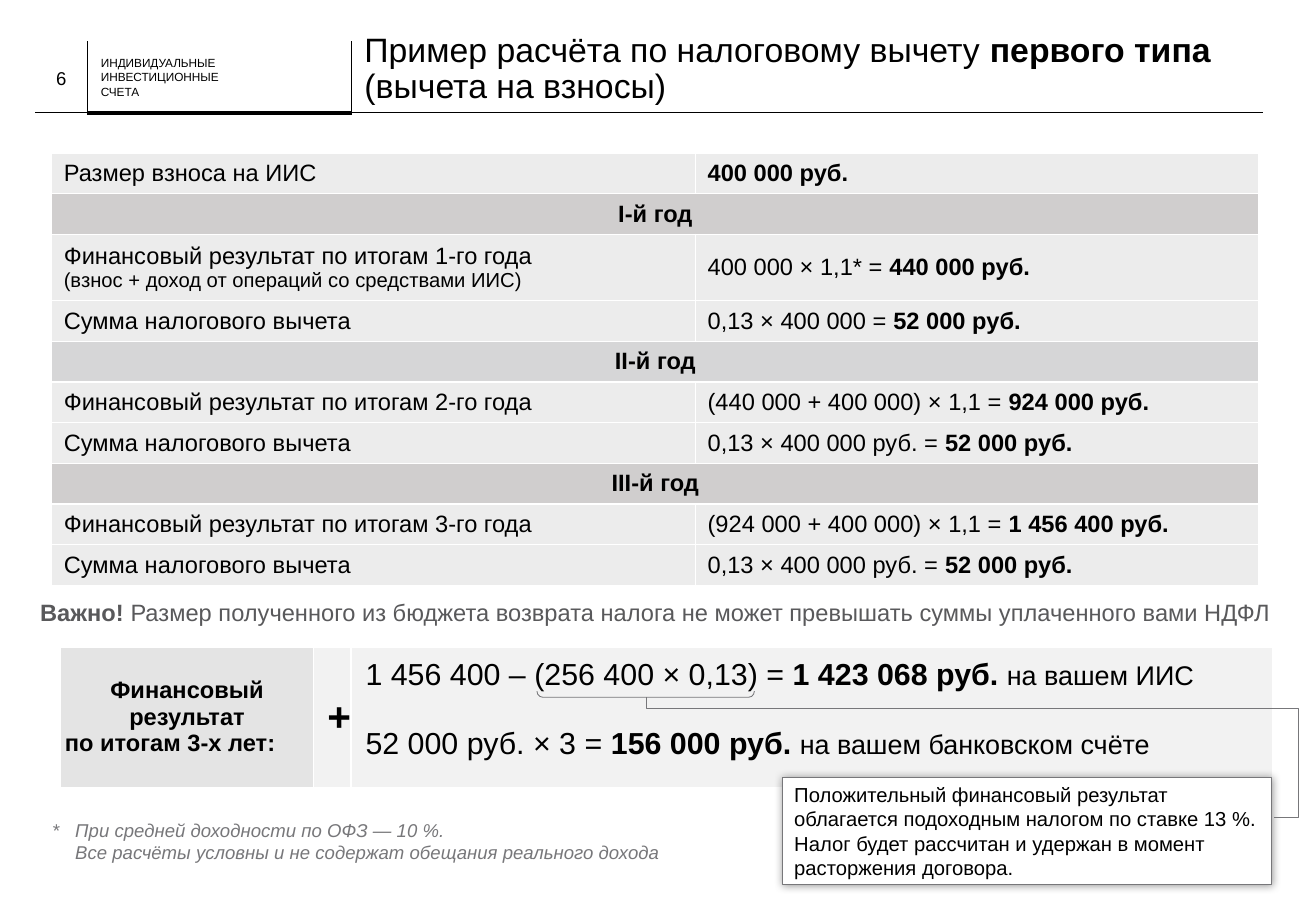
from dataclasses import dataclass

import lxml.etree
import pptx
import pptx.dml.color
import pptx.enum.shapes
import pptx.enum.text
import pptx.oxml.ns
import pptx.shapes.connector
import pptx.slide
import pptx.table
import pptx.text.text
import pptx.util

Pt = pptx.util.Pt
RGBColor = pptx.dml.color.RGBColor
Align = pptx.enum.text.PP_ALIGN
Anchor = pptx.enum.text.MSO_ANCHOR
Shape = pptx.enum.shapes.MSO_SHAPE
Connector = pptx.enum.shapes.MSO_CONNECTOR
qn = pptx.oxml.ns.qn
PLAIN_TABLE_STYLE = "{2D5ABB26-0587-4C30-8999-92F81FD0307C}"


@dataclass(frozen=True)
class Theme:
    font: str = "Arial"
    ink: str = "000000"
    notice: str = "59595B"
    muted: str = "77777A"
    white: str = "FFFFFF"
    row: str = "ECECEC"
    year: str = "D0CECE"
    year_light: str = "D6D6D7"
    result_label: str = "E4E4E4"
    result: str = "F2F2F2"
    title_size: float = 20
    body_size: float = 14
    sum_size: float = 18
    place_size: float = 16
    plus_size: float = 24
    small_size: float = 12
    note_size: float = 11
    label_size: float = 7


THEME = Theme()


@dataclass(frozen=True)
class Span:
    text: str
    bold: bool = False
    size: float | None = None


@dataclass(frozen=True)
class Para:
    spans: tuple[Span, ...]
    size: float = THEME.body_size
    color: str = THEME.ink
    align: Align = Align.LEFT
    italic: bool = False
    line_spacing: float | None = None
    indent: float = 0
    tab: float = 0


@dataclass(frozen=True)
class Row:
    cells: tuple[tuple[Para, ...], ...]
    fill: str = THEME.row
    height: float = 24.1


@dataclass(frozen=True)
class Line:
    start: tuple[float, float]
    end: tuple[float, float]
    width: float = 0.25


def plain(text: str, bold: bool = False, **style) -> Para:
    return Para((Span(text, bold),), **style)


def year(name: str, fill: str = THEME.year) -> Row:
    return Row(((plain(name, True, align=Align.CENTER),),), fill)


def sums(label: str, formula: str, total: str) -> Row:
    return Row(((plain(label),), (Para((Span(formula), Span(total, True))),)))


DEDUCTION = "Сумма налогового вычета"
YEARS = (
    sums("Размер взноса на ИИС", "", "400 000 руб."),
    year("I-й год"),
    Row(((plain("Финансовый результат по итогам 1-го года"),
          plain("(взнос + доход от операций со средствами ИИС)", size=THEME.small_size)),
         (Para((Span("400 000 × 1,1* = "), Span("440 000 руб.", True))),)), height=39.4),
    sums(DEDUCTION, "0,13 × 400 000 = ", "52 000 руб."),
    year("II-й год", THEME.year_light),
    sums("Финансовый результат по итогам 2-го года", "(440 000 + 400 000) × 1,1 = ", "924 000 руб."),
    sums(DEDUCTION, "0,13 × 400 000 руб. = ", "52 000 руб."),
    year("III-й год"),
    sums("Финансовый результат по итогам 3-го года", "(924 000 + 400 000) × 1,1 = ", "1 456 400 руб."),
    sums(DEDUCTION, "0,13 × 400 000 руб. = ", "52 000 руб."),
)
RESULTS = (
    ("1 456 400 – (256 400 × 0,13) = ", "1 423 068 руб. ", "на вашем ИИС"),
    ("52 000 руб. × 3 = ", "156 000 руб. ", "на вашем банковском счёте"),
)
HEADER_LINES = (
    Line((20.9, 66.4), (51.8, 66.4)),
    Line((51.8, 67), (208.8, 67), 2.25),
    Line((207.4, 66.4), (748.8, 66.4)),
    Line((51.8, 24.5), (51.8, 67)),
    Line((208.1, 24.5), (208.1, 67)),
)


def write(frame: pptx.text.text.TextFrame, paras: tuple[Para, ...]) -> None:
    for index, spec_para in enumerate(paras):
        para = frame.add_paragraph() if index else frame.paragraphs[0]
        para.alignment = spec_para.align
        if spec_para.line_spacing:
            para.line_spacing = spec_para.line_spacing
        font = para.font
        font.name, font.size, font.italic = THEME.font, Pt(spec_para.size), spec_para.italic
        font.color.rgb = RGBColor.from_string(spec_para.color)
        props = para._p.get_or_add_pPr()
        if spec_para.indent:
            props.set("marL", str(Pt(spec_para.indent)))
        if spec_para.tab:
            tabs = lxml.etree.Element(qn("a:tabLst"))
            lxml.etree.SubElement(tabs, qn("a:tab"), pos=str(Pt(spec_para.tab)), algn="l")
            props.find(qn("a:defRPr")).addprevious(tabs)
        if len({item.bold for item in spec_para.spans}) == 1:
            font.bold = spec_para.spans[0].bold
        for item in spec_para.spans:
            if not item.text:
                continue
            span = para.add_run()
            span.text = item.text
            if len(spec_para.spans) > 1:
                span.font.bold = item.bold
            if item.size:
                span.font.size = Pt(item.size)


def set_margins(frame, left: float, top: float, right: float, bottom: float) -> None:
    """Set the insets of a text frame or a table cell."""
    frame.margin_left, frame.margin_top = Pt(left), Pt(top)
    frame.margin_right, frame.margin_bottom = Pt(right), Pt(bottom)


def add_text(page: pptx.slide.Slide, at: tuple[float, ...], paras: tuple[Para, ...],
             anchor: Anchor = Anchor.MIDDLE, inset: tuple[float, ...] = (0, 0, 0, 0)) -> None:
    frame = page.shapes.add_textbox(*map(Pt, at)).text_frame
    frame.word_wrap, frame.vertical_anchor = True, anchor
    set_margins(frame, *inset)
    write(frame, paras)


def add_line(page: pptx.slide.Slide, line: Line, color: str = THEME.ink,
             kind: Connector = Connector.STRAIGHT) -> pptx.shapes.connector.Connector:
    link = page.shapes.add_connector(kind, *map(Pt, line.start + line.end))
    link.line.width = Pt(line.width)
    link.line.color.rgb = RGBColor.from_string(color)
    lxml.etree.SubElement(link._element.spPr, qn("a:effectLst"))
    return link


def add_table(page: pptx.slide.Slide, left: float, top: float, widths: tuple[float, ...],
              heights: tuple[float, ...]) -> pptx.table.Table:
    table = page.shapes.add_table(len(heights), len(widths), Pt(left), Pt(top),
                                  Pt(sum(widths)), Pt(sum(heights))).table
    table.first_row = table.horz_banding = False
    table._tbl.tblPr.find(qn("a:tableStyleId")).text = PLAIN_TABLE_STYLE
    for column, width in zip(table.columns, widths):
        column.width = Pt(width)
    for row, height in zip(table.rows, heights):
        row.height = Pt(height)
    return table


def format_cell(cell: pptx.table._Cell, fill: str, sides: str = "") -> None:
    """Fill the cell and give it white borders on the sides named by L, R, T, B."""
    cell.vertical_anchor = Anchor.MIDDLE
    cell.fill.solid()
    cell.fill.fore_color.rgb = RGBColor.from_string(fill)
    for index, side in enumerate(sides):
        border = lxml.etree.Element(qn(f"a:ln{side}"), w=str(Pt(1)))
        solid = lxml.etree.SubElement(border, qn("a:solidFill"))
        lxml.etree.SubElement(solid, qn("a:srgbClr"), val=THEME.white)
        cell._tc.get_or_add_tcPr().insert(index, border)


def add_years(page: pptx.slide.Slide) -> None:
    table = add_table(page, 30.6, 90.7, (381.6, 334.1), tuple(row.height for row in YEARS))
    for index, row in enumerate(YEARS):
        for column in range(2):
            format_cell(table.cell(index, column), row.fill, "LRTB")
        if len(row.cells) == 1:
            table.cell(index, 0).merge(table.cell(index, 1))
        for column, paras in enumerate(row.cells):
            write(table.cell(index, column).text_frame, paras)


def add_results(page: pptx.slide.Slide) -> None:
    table = add_table(page, 36, 383.8, (149.8, 22.3, 545.8), (32, 50.4))
    for index, (formula, total, place) in enumerate(RESULTS):
        for column, (fill, sides, left) in enumerate((
                (THEME.result_label, "R", 0), (THEME.result, "L", 0), (THEME.result, "", 8.6))):
            cell = table.cell(index, column)
            format_cell(cell, fill, sides)
            set_margins(cell, left, 0, 0, 0)
        write(table.cell(index, 2).text_frame, (Para(
            (Span(formula), Span(total, True), Span(place, size=THEME.place_size)),
            THEME.sum_size),))
    for column in range(2):
        table.cell(0, column).merge(table.cell(1, column))
    write(table.cell(0, 0).text_frame, (
        plain("Финансовый результат", True, align=Align.CENTER),
        plain("по итогам 3-х лет:", True, indent=2.4)))
    write(table.cell(0, 1).text_frame,
          (plain("+", True, size=THEME.plus_size, align=Align.RIGHT),))


def add_callout(page: pptx.slide.Slide) -> None:
    box = page.shapes.add_shape(Shape.RECTANGLE, Pt(463.7), Pt(460.8), Pt(290.2), Pt(63.4))
    box.shadow.inherit = False
    box.fill.solid()
    box.fill.fore_color.rgb = RGBColor.from_string(THEME.white)
    box.line.color.rgb = RGBColor.from_string(THEME.muted)
    box.line.width = Pt(0.75)
    shadow = lxml.etree.SubElement(box._element.spPr.find(qn("a:effectLst")),
                                   qn("a:outerShdw"), blurRad=str(Pt(5)), dist="0")
    color = lxml.etree.SubElement(shadow, qn("a:srgbClr"), val=THEME.ink)
    lxml.etree.SubElement(color, qn("a:alpha"), val="40000")
    box.text_frame.vertical_anchor = Anchor.MIDDLE
    write(box.text_frame, tuple(plain(text, size=THEME.small_size) for text in (
        "Положительный финансовый результат облагается подоходным налогом по ставке 13 %.",
        "Налог будет рассчитан и удержан в момент расторжения договора.")))


def add_tax_link(page: pptx.slide.Slide) -> None:
    """Bracket the taxed sum and lead from it to the callout."""
    link = add_line(page, Line((533.5, 262.8), (604.8, 635), 0.5), THEME.muted, Connector.ELBOW)
    frame = link._element.spPr.find(qn("a:xfrm"))
    frame.set("rot", "16200000")
    frame.set("flipH", "1")
    shape = link._element.spPr.find(qn("a:prstGeom"))
    shape.set("prst", "bentConnector4")
    for name, value in (("adj1", 9300), ("adj2", 103800)):
        lxml.etree.SubElement(shape.find(qn("a:avLst")), qn("a:gd"), name=name, fmla=f"val {value}")
    bracket = page.shapes.add_shape(Shape.RIGHT_BRACKET, Pt(380.9), Pt(347), Pt(3.6), Pt(128.9))
    bracket.rotation = 90
    bracket.adjustments[0] = 0.92
    bracket.shadow.inherit = False
    bracket.fill.background()
    bracket.line.color.rgb = RGBColor.from_string(THEME.muted)
    bracket.line.width = Pt(0.5)


def add_header(page: pptx.slide.Slide) -> None:
    for line in HEADER_LINES:
        add_line(page, line)
    add_text(page, (59.8, 33.1, 146.2, 25.2), tuple(
        plain(word, size=THEME.label_size)
        for word in ("ИНДИВИДУАЛЬНЫЕ", "ИНВЕСТИЦИОННЫЕ", "СЧЕТА")))
    add_text(page, (20.9, 31.7, 31, 28.8),
             (plain("6", size=THEME.note_size, align=Align.CENTER),))
    title = page.shapes.title
    title.left, title.top, title.width, title.height = map(Pt, (216, 18, 533.5, 46.8))
    frame = title.text_frame
    frame.auto_size = pptx.enum.text.MSO_AUTO_SIZE.NONE
    frame.word_wrap, frame.vertical_anchor = True, Anchor.MIDDLE
    set_margins(frame, 0, 0, 0, 0)
    write(frame, (Para((Span("Пример расчёта по налоговому вычету "), Span("первого типа ", True),
                        Span("(вычета на взносы)")), THEME.title_size, line_spacing=0.9),))


def main() -> None:
    deck = pptx.Presentation()
    deck.slide_width, deck.slide_height = Pt(780), Pt(540)
    page = deck.slides.add_slide(deck.slide_layouts[5])
    add_header(page)
    add_years(page)
    add_results(page)
    add_callout(page)
    add_text(page, (23.8, 356.4, 733, 21.6), (Para(
        (Span("Важно! ", True), Span("Размер полученного из бюджета возврата налога "
                                     "не может превышать суммы уплаченного вами НДФЛ")),
        color=THEME.notice, line_spacing=0.9),), Anchor.TOP)
    add_text(page, (23.8, 481.7, 416.9, 33.8), tuple(
        plain(text, size=THEME.note_size, color=THEME.muted, italic=True, tab=13.7) for text in (
            "*\tПри средней доходности по ОФЗ — 10 %.",
            "\tВсе расчёты условны и не содержат обещания реального дохода")),
        Anchor.TOP, (7.2, 3.6, 7.2, 3.6))
    add_tax_link(page)
    deck.save("out.pptx")


if __name__ == "__main__":
    main()
